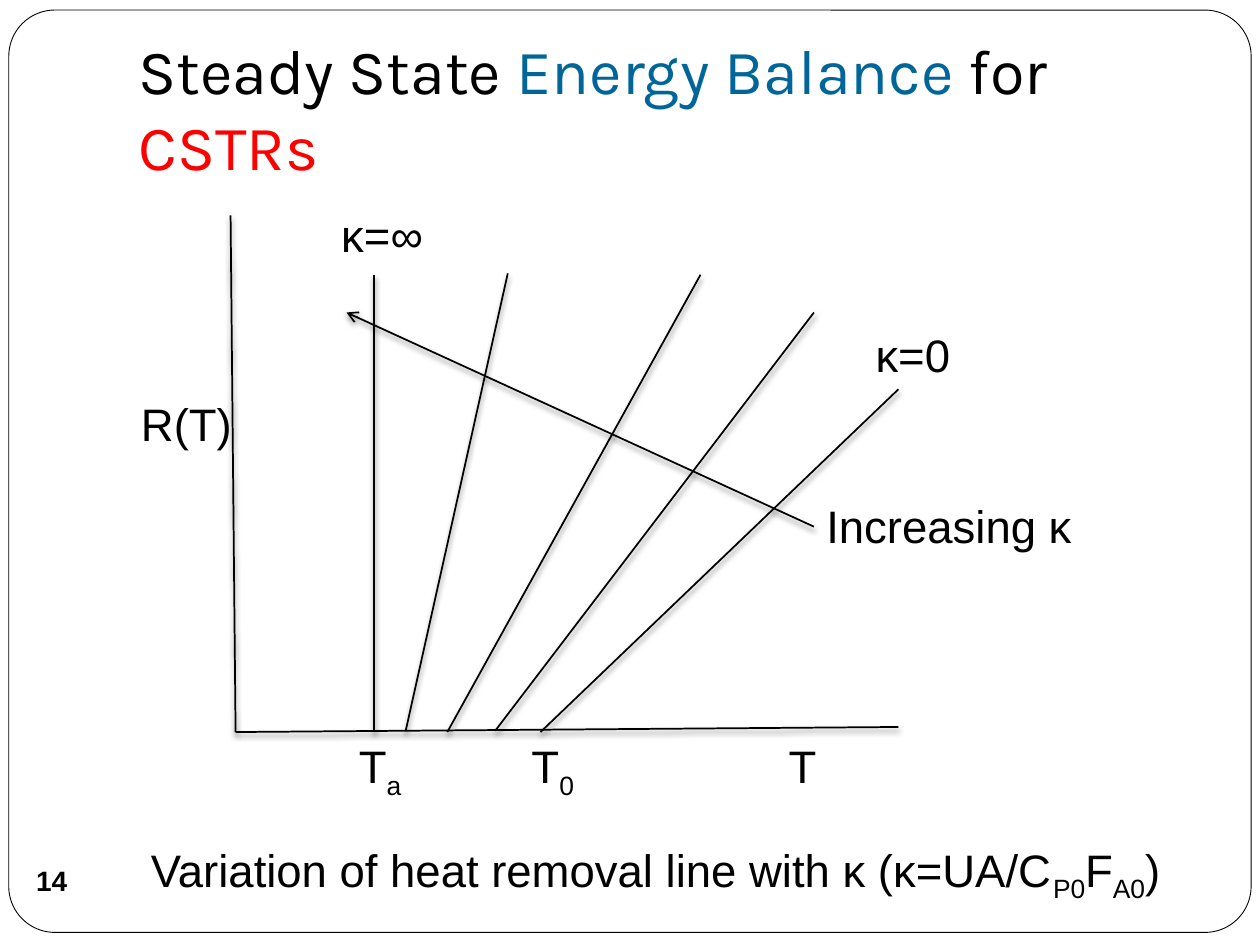
"""Build the slide on heat removal lines in the CSTR energy balance."""
from lxml.etree import SubElement
from pptx import Presentation
from pptx.dml.color import RGBColor
from pptx.enum.shapes import MSO_CONNECTOR, MSO_SHAPE
from pptx.enum.text import MSO_ANCHOR, MSO_AUTO_SIZE, PP_ALIGN
from pptx.oxml import parse_xml
from pptx.oxml.ns import nsdecls, qn
from pptx.util import Pt

PX = 9144
COLORS = {"black": "000000", "white": "FFFFFF", "blue": "006699", "red": "FF0000"}
BODY = {"name": "Arial", "size": Pt(26), "bold": False}
NUMBER = {"name": "Arial", "size": Pt(16), "bold": True}
TITLE = {"name": "Karla", "size": Pt(36), "bold": False}
SHADOW = (
    f'<a:effectLst {nsdecls("a")}><a:outerShdw blurRad="38100" dist="25400" dir="5400000" '
    f'rotWithShape="0"><a:srgbClr val="{COLORS["black"]}"><a:alpha val="50000"/></a:srgbClr>'
    "</a:outerShdw></a:effectLst>"
)


def write(para, text, style, color="black", subscript=False):
    span = para.add_run()
    span.text = text
    for name, value in style.items():
        setattr(span.font, name, value)
    span.font.color.rgb = RGBColor.from_string(COLORS[color])
    if subscript:
        span.font._element.set("baseline", "-25000")


def draw_line(page, start, end, arrow=False):
    connector = page.shapes.add_connector(
        MSO_CONNECTOR.STRAIGHT, *(value * PX for value in start + end)
    )
    connector.line.color.rgb = RGBColor.from_string(COLORS["black"])
    connector.line.width = Pt(1)
    properties = connector._element.spPr
    if arrow:
        SubElement(properties.find(qn("a:ln")), qn("a:tailEnd"), type="arrow")
    properties.append(parse_xml(SHADOW))


deck = Presentation()
deck.slide_width, deck.slide_height = 1000 * PX, 750 * PX
page = deck.slides.add_slide(deck.slide_layouts[5])

frame = page.shapes.add_shape(
    MSO_SHAPE.ROUNDED_RECTANGLE, 7 * PX, 8 * PX, 986 * PX, 732 * PX
)
frame.adjustments[0] = 0.05
frame.shadow.inherit = False
frame.fill.solid()
frame.fill.fore_color.rgb = RGBColor.from_string(COLORS["white"])
frame.line.color.rgb = RGBColor.from_string(COLORS["black"])
frame.line.width = Pt(0.5)

axes = [((183, 171), (187, 581)), ((187, 581), (713, 577))]
removal_lines = [
    ((297, 218), (297, 581)),
    ((403, 217), (322, 580)),
    ((556, 218), (355, 581)),
    ((646, 248), (393, 580)),
    ((713, 309), (429, 581)),
]
for start, end in axes + removal_lines:
    draw_line(page, start, end)
draw_line(page, (646, 418), (275, 248), arrow=True)

labels = [
    (102, 309, 109, ["R(T)"]),
    (412, 581, 64, ["T", "0"]),
    (275, 581, 66, ["T", "a"]),
    (616, 581, 61, ["T"]),
    (261, 159, 109, ["κ=∞"]),
    (685, 255, 109, ["κ=0"]),
    (646, 390, 223, ["Increasing κ"]),
    (110, 663, 894, ["Variation of heat removal line with κ (κ=UA/C", "P0", "F", "A0", ")"]),
]
for left, top, width, parts in labels:
    box = page.shapes.add_textbox(left * PX, top * PX, width * PX, 54 * PX)
    box.text_frame.word_wrap = True
    para = box.text_frame.paragraphs[0]
    for index, text in enumerate(parts):
        write(para, text, BODY, subscript=index % 2 == 1)

badge = page.shapes.add_shape(MSO_SHAPE.OVAL, 16 * PX, 679 * PX, 50 * PX, 50 * PX)
badge.shadow.inherit = False
badge.fill.background()
badge.line.fill.background()
badge_margins = {"left": 0, "top": 0, "right": 0, "bottom": 10}
for side, margin in badge_margins.items():
    setattr(badge.text_frame, f"margin_{side}", margin * PX)
para = badge.text_frame.paragraphs[0]
para.alignment = PP_ALIGN.CENTER
write(para, "14", NUMBER)

title = page.shapes.title
title.left, title.top, title.width, title.height = 100 * PX, 30 * PX, 850 * PX, 125 * PX
title_format = {
    "vertical_anchor": MSO_ANCHOR.BOTTOM,
    "auto_size": MSO_AUTO_SIZE.NONE,
    "word_wrap": True,
    "margin_left": 10 * PX,
    "margin_top": 5 * PX,
    "margin_right": 10 * PX,
    "margin_bottom": 10 * PX,
}
for name, value in title_format.items():
    setattr(title.text_frame, name, value)
para = title.text_frame.paragraphs[0]
para.alignment = PP_ALIGN.LEFT
for text, color in [
    ("Steady State ", "black"),
    ("Energy Balance ", "blue"),
    ("for ", "black"),
    ("CSTRs", "red"),
]:
    write(para, text, TITLE, color)
frame._element.addnext(title._element)

deck.save("out.pptx")
